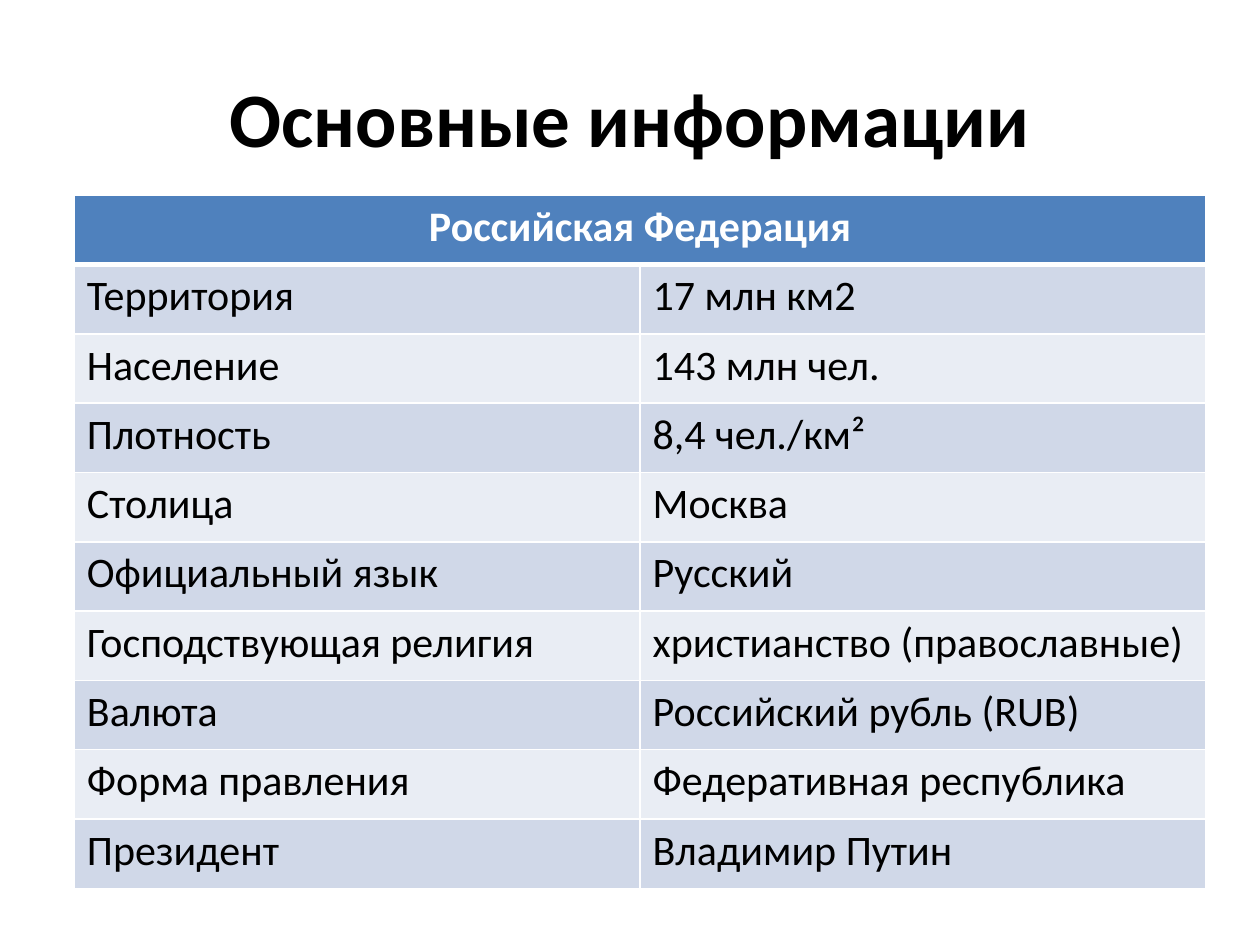
import pptx
import pptx.util
import pptx.dml.color
import pptx.enum.text
import pptx.oxml
import pptx.oxml.ns

TITLE = "Основные информации"
HEAD = "Российская Федерация"
FACTS = [
    ("Территория", "17 млн км2"),
    ("Население", "143 млн чел."),
    ("Плотность", "8,4 чел./км²"),
    ("Столица", "Москва"),
    ("Официальный язык", "Русский"),
    ("Господствующая религия", "христианство (православные)"),
    ("Валюта", "Российский рубль (RUB)"),
    ("Форма правления", "Федеративная республика"),
    ("Президент", "Владимир Путин"),
]
COLORS = {"head": "4F81BD", "odd": "D0D8E8", "even": "E9EDF4",
          "white": "FFFFFF", "black": "000000"}
FONT = "Calibri"
WIDTH, HEIGHT = 10, 7.5
LEFT, TOP, COL, ROW = 0.59, 1.55, 4.49, 0.55

inch = pptx.util.Inches
Align = pptx.enum.text.PP_ALIGN
Anchor = pptx.enum.text.MSO_ANCHOR


def color(name):
    return pptx.dml.color.RGBColor.from_string(COLORS[name])


def write(frame, text, size, ink, bold=False, align=Align.LEFT):
    frame.text = text
    para = frame.paragraphs[0]
    para.alignment = align
    font = para.font
    font.name, font.size, font.bold = FONT, pptx.util.Pt(size), bold
    font.color.rgb = color(ink)


def edge(cell, top, bottom):
    """Draw white cell borders; top and bottom widths are in points."""
    props = cell._tc.get_or_add_tcPr()
    widths = {"lnL": 1, "lnR": 1, "lnT": top, "lnB": bottom}
    for spot, (tag, width) in enumerate(widths.items()):
        props.insert(spot, pptx.oxml.parse_xml(
            f'<a:{tag} {pptx.oxml.ns.nsdecls("a")} w="{pptx.util.Pt(width)}">'
            f'<a:solidFill><a:srgbClr val="{COLORS["white"]}"/></a:solidFill>'
            f'</a:{tag}>'))


deck = pptx.Presentation()
deck.slide_width, deck.slide_height = inch(WIDTH), inch(HEIGHT)
slide = deck.slides.add_slide(deck.slide_layouts[6])

title = slide.shapes.add_textbox(
    inch(0.05 * WIDTH), inch(0.04 * HEIGHT), inch(0.9 * WIDTH), inch(TOP - 0.04 * HEIGHT))
title.text_frame.word_wrap = True
title.text_frame.vertical_anchor = Anchor.MIDDLE
write(title.text_frame, TITLE, 44, "black", True, Align.CENTER)

rows = [(HEAD, "")] + FACTS
table = slide.shapes.add_table(
    len(rows), 2, inch(LEFT), inch(TOP), inch(2 * COL), inch(len(rows) * ROW)).table
table.cell(0, 0).merge(table.cell(0, 1))

for r, row in enumerate(rows):
    fill = "head" if r == 0 else "odd" if r % 2 else "even"
    for c, text in enumerate(row):
        cell = table.cell(r, c)
        cell.fill.solid()
        cell.fill.fore_color.rgb = color(fill)
        edge(cell, 3 if r == 1 else 1, 3 if r == 0 else 1)
        if r:
            write(cell.text_frame, text, 24, "black")
        elif text:
            write(cell.text_frame, text, 24, "white", True, Align.CENTER)

deck.save("out.pptx")
